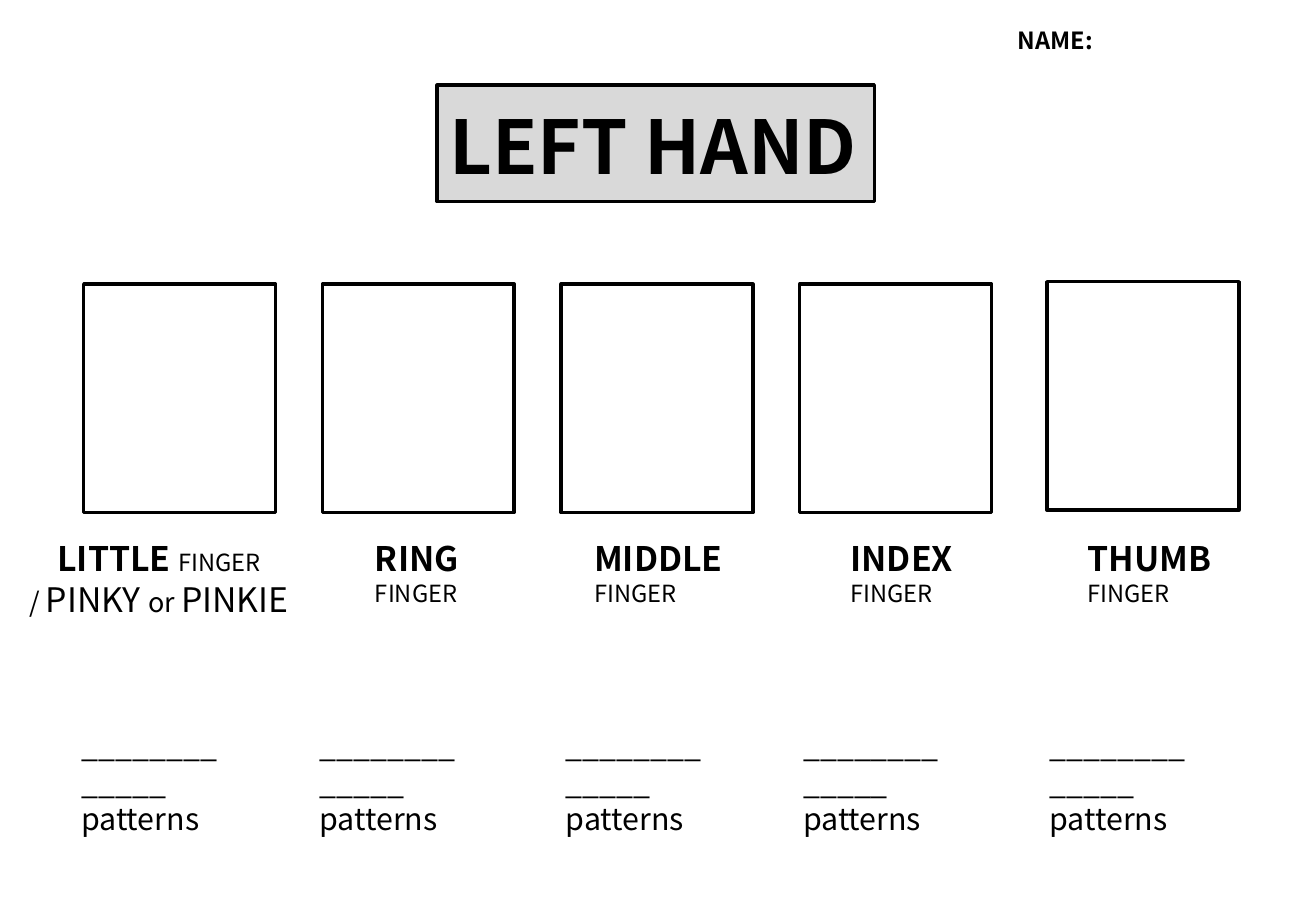
import pptx
import pptx.util
import pptx.dml.color
import pptx.enum.shapes

Cm = pptx.util.Cm
Pt = pptx.util.Pt


def paint(target, color):
    target.solid()
    target.fore_color.rgb = pptx.dml.color.RGBColor.from_string(color)


def write(left, top, width, height, lines):
    box = slide.shapes.add_textbox(Cm(left), Cm(top), Cm(width), Cm(height))
    frame = box.text_frame
    frame.word_wrap = True
    for row, (indent, runs) in enumerate(lines):
        para = frame.add_paragraph() if row else frame.paragraphs[0]
        para.font.name = "Noto Sans CJK KR"
        paint(para.font.fill, "000000")
        if indent:
            props = para._p.get_or_add_pPr()
            props.set("marL", str(Cm(indent)))
            props.set("indent", "0")
        if len(runs) == 1:
            para.font.size = Pt(runs[0][1])
            para.font.bold = runs[0][2]
        for text, size, bold in runs:
            run = para.add_run()
            run.text = text
            if len(runs) > 1:
                run.font.size = Pt(size)
                run.font.bold = bold


deck = pptx.Presentation()
deck.slide_width = Cm(27.51)
deck.slide_height = Cm(19.05)
slide = deck.slides.add_slide(deck.slide_layouts[6])

frames = [(9.14, 1.78, 9.14, 2.44, "D9D9D9")]
frames += [(1.75 + 4.99 * col, 5.94, 4.01, 4.78, "FFFFFF") for col in range(4)]
frames.append((21.89, 5.89, 4.01, 4.78, "FFFFFF"))
for left, top, width, height, color in frames:
    rect = slide.shapes.add_shape(
        pptx.enum.shapes.MSO_SHAPE.RECTANGLE,
        Cm(left), Cm(top), Cm(width), Cm(height))
    rect.shadow.inherit = False
    paint(rect.fill, color)
    paint(rect.line.fill, "000000")
    rect.line.width = Pt(2)

write(21.03, 0.41, 3, 0.86, [(0, [("NAME:", 14, True)])])
write(9.14, 1.98, 9.68, 2.13, [(0, [("LEFT HAND", 44, True)])])

write(0, 11.13, 6.86, 1.96, [
    (0.95, [("LITTLE ", 20, True), ("FINGER", 14, False)]),
    (0.36, [("/ ", 16, False), ("PINKY ", 20, False),
            ("or ", 16, False), ("PINKIE", 20, False)]),
])
fingers = [("RING", 7.59), ("MIDDLE", 12.17), ("INDEX", 17.53), ("THUMB", 22.48)]
for name, left in fingers:
    write(left, 11.13, 3.5, 1.7,
          [(0, [(name, 20, True)]), (0, [("FINGER", 14, False)])])

for left in (1.45, 6.43, 11.58, 16.54, 21.69):
    write(left, 15.09, 4.57, 1.8,
          [(0, [("________ _____", 18, False)]), (0, [("patterns", 18, False)])])

deck.save("out.pptx")
